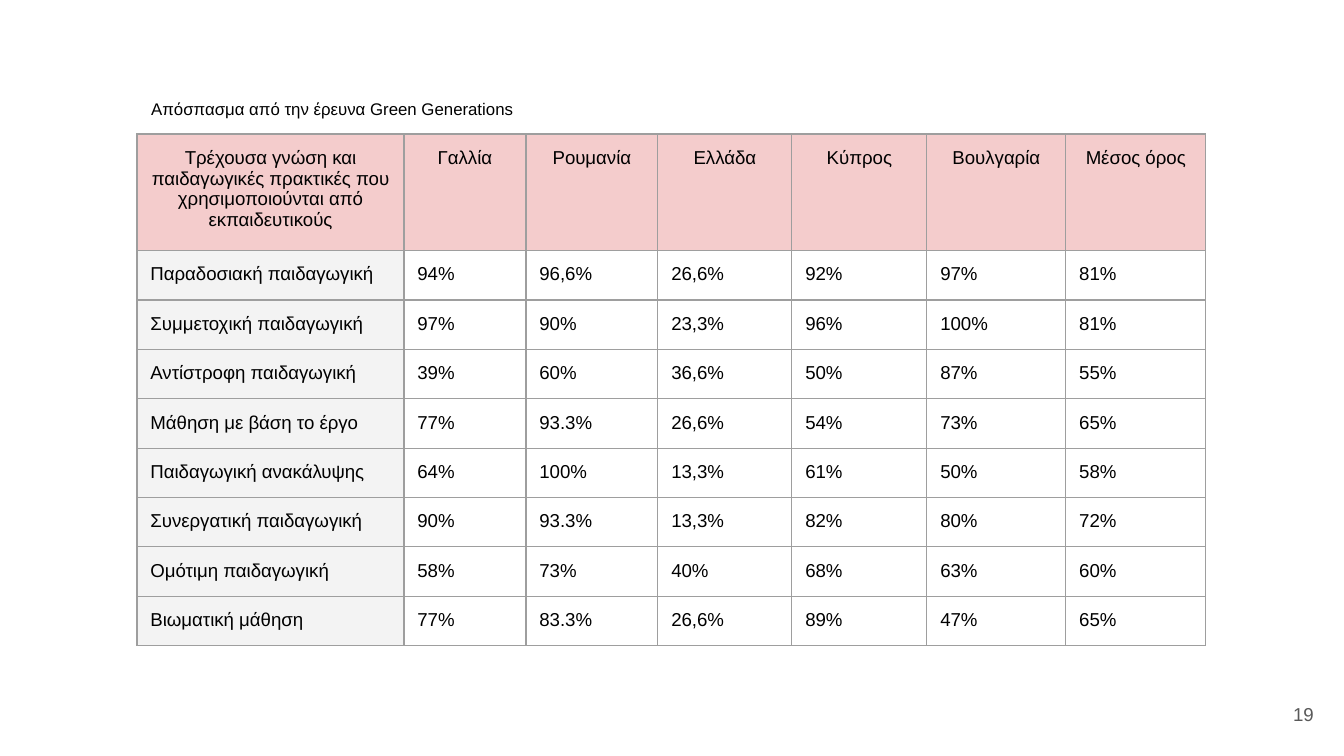
from lxml import etree
from pptx import Presentation
from pptx.dml.color import RGBColor
from pptx.enum.text import MSO_ANCHOR, PP_ALIGN
from pptx.oxml.ns import qn
from pptx.util import Emu, Pt

LEFT, MID, RIGHT = PP_ALIGN.LEFT, PP_ALIGN.CENTER, PP_ALIGN.RIGHT
TOP, CENTER = MSO_ANCHOR.TOP, MSO_ANCHOR.MIDDLE
SCALE = 914400 / 134.4
COLORS = {"ink": "000000", "gray": "595959", "line": "9E9E9E",
          "head": "F4CCCC", "side": "F3F3F3"}
WIDTHS = [267, 122, 132, 134, 135, 139, 140]
HEAD_H, ROW_H = 51, 40
ROWS = [
    ["Τρέχουσα γνώση και παιδαγωγικές πρακτικές που χρησιμοποιούνται από εκπαιδευτικούς",
     "Γαλλία", "Ρουμανία", "Ελλάδα", "Κύπρος", "Βουλγαρία", "Μέσος όρος"],
    ["Παραδοσιακή παιδαγωγική", "94%", "96,6%", "26,6%", "92%", "97%", "81%"],
    ["Συμμετοχική παιδαγωγική", "97%", "90%", "23,3%", "96%", "100%", "81%"],
    ["Αντίστροφη παιδαγωγική", "39%", "60%", "36,6%", "50%", "87%", "55%"],
    ["Μάθηση με βάση το έργο", "77%", "93.3%", "26,6%", "54%", "73%", "65%"],
    ["Παιδαγωγική ανακάλυψης", "64%", "100%", "13,3%", "61%", "50%", "58%"],
    ["Συνεργατική παιδαγωγική", "90%", "93.3%", "13,3%", "82%", "80%", "72%"],
    ["Ομότιμη παιδαγωγική", "58%", "73%", "40%", "68%", "63%", "60%"],
    ["Βιωματική μάθηση", "77%", "83.3%", "26,6%", "89%", "47%", "65%"],
]


def px(n):
    return Emu(round(n * SCALE))


class Deck:
    font = "Arial"
    inset = Pt(7.2)
    border = Pt(0.75)

    def __init__(self, wide, high):
        self.prs = Presentation()
        self.prs.slide_width, self.prs.slide_height = px(wide), px(high)
        self.slide = self.prs.slides.add_slide(self.prs.slide_layouts[6])

    def pad(self, box):
        box.margin_left = box.margin_right = self.inset
        box.margin_top = box.margin_bottom = self.inset

    def run(self, frame, text, size, color, align):
        para = frame.paragraphs[0]
        para.alignment = align
        run = para.add_run()
        run.text = text
        run.font.name = self.font
        run.font.size = Pt(size)
        run.font.color.rgb = RGBColor.from_string(COLORS[color])

    def text(self, x, y, w, h, text, size, color="ink", align=LEFT, anchor=TOP):
        box = self.slide.shapes.add_textbox(px(x), px(y), px(w), px(h))
        frame = box.text_frame
        frame.word_wrap = True
        frame.vertical_anchor = anchor
        self.pad(frame)
        self.run(frame, text, size, color, align)

    def edge(self, cell):
        props = cell._tc.get_or_add_tcPr()
        for side in ("a:lnL", "a:lnR", "a:lnT", "a:lnB"):
            line = etree.SubElement(props, qn(side), w=str(self.border))
            fill = etree.SubElement(line, qn("a:solidFill"))
            etree.SubElement(fill, qn("a:srgbClr"), val=COLORS["line"])

    def cell(self, cell, text, fill, align):
        self.pad(cell)
        self.edge(cell)
        if fill:
            cell.fill.solid()
            cell.fill.fore_color.rgb = RGBColor.from_string(COLORS[fill])
        else:
            cell.fill.background()
        self.run(cell.text_frame, text, 10, "ink", align)

    def table(self, x, y, widths, heights, rows):
        grid = self.slide.shapes.add_table(
            len(rows), len(widths), px(x), px(y),
            px(sum(widths)), px(sum(heights))).table
        for col, w in zip(grid.columns, widths):
            col.width = px(w)
        for row, h in zip(grid.rows, heights):
            row.height = px(h)
        for r, row in enumerate(rows):
            for c, text in enumerate(row):
                fill = "head" if r == 0 else "side" if c == 0 else None
                self.cell(grid.cell(r, c), text, fill, LEFT if r else MID)


def main():
    deck = Deck(1344, 756)
    deck.text(1246, 685, 81, 58, "19", 10, "gray", RIGHT, CENTER)
    heights = [HEAD_H] + [ROW_H] * (len(ROWS) - 1)
    deck.table(137, 134, WIDTHS, heights, ROWS)
    deck.text(138, 89, 450, 47, "Απόσπασμα από την έρευνα Green Generations", 9)
    deck.prs.save("out.pptx")


if __name__ == "__main__":
    main()
